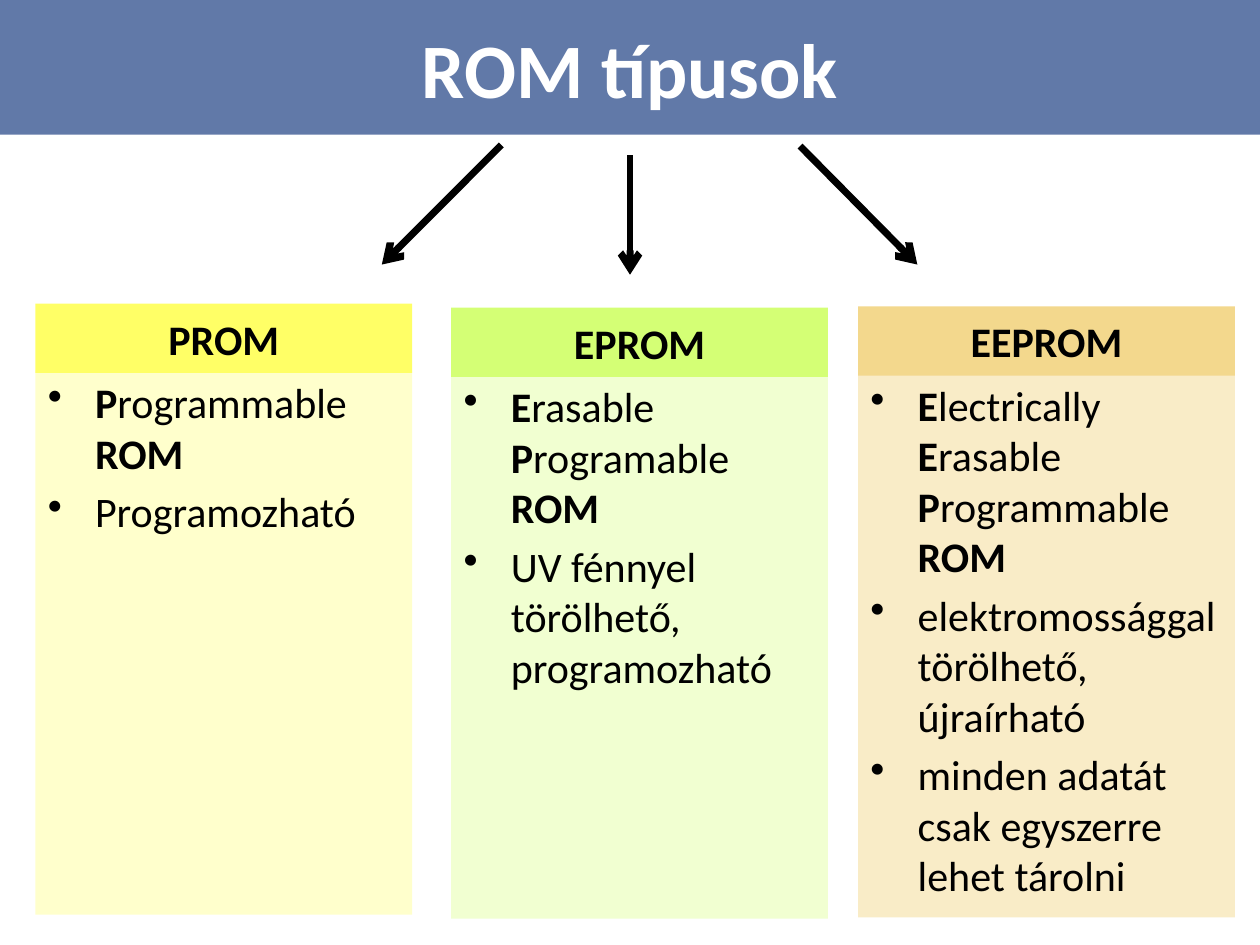
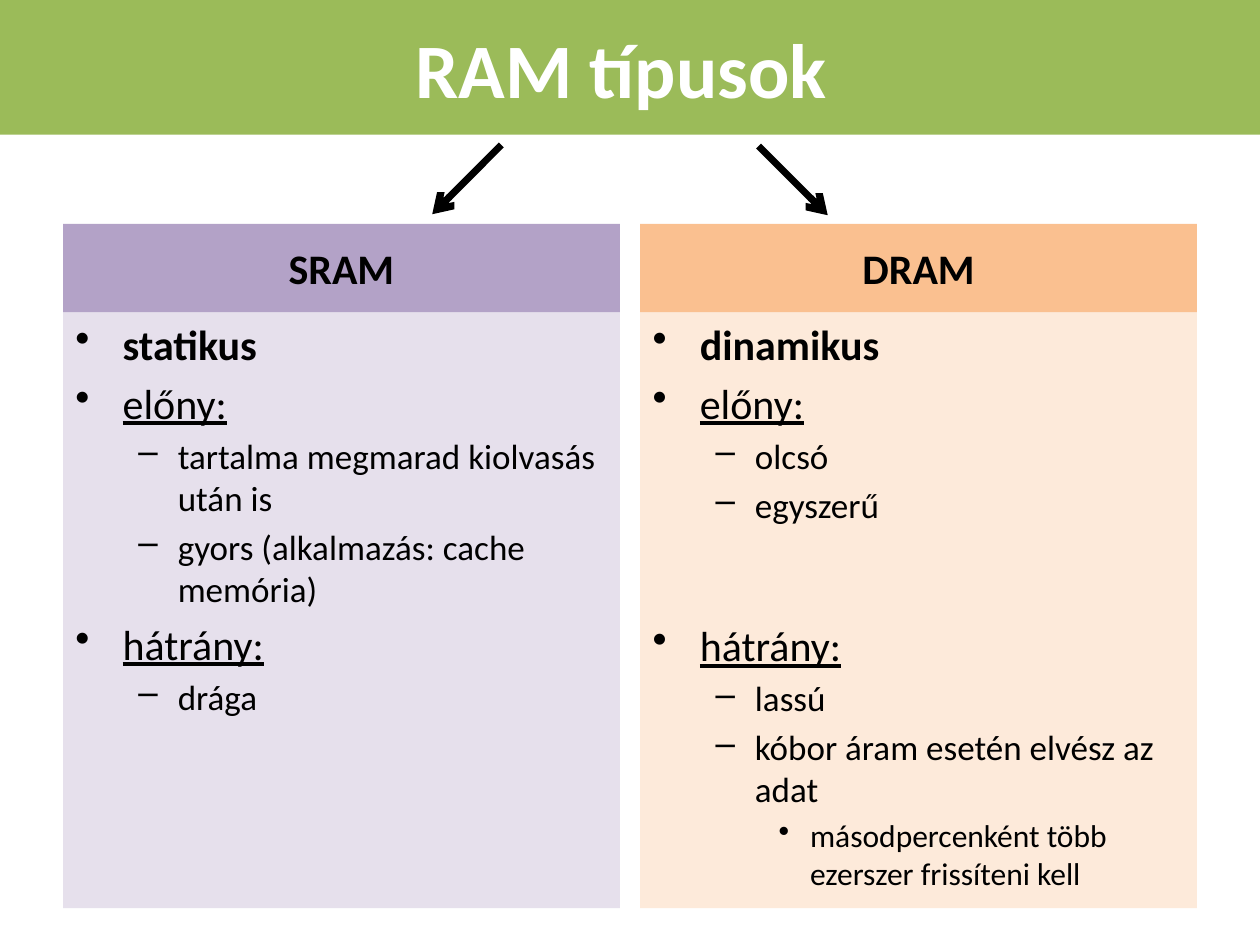
from lxml import etree
from pptx import Presentation
from pptx import util as u
from pptx.dml.color import RGBColor
from pptx.enum import shapes, text
from pptx.oxml import ns

Pt = u.Pt
HUES = {
    "rom": "6179A8", "ram": "9BBB59", "white": "FFFFFF", "black": "000000",
    "prom": "FFFF66", "prom body": "FFFFCC",
    "eprom": "D4FF75", "eprom body": "F1FFD1",
    "eeprom": "F3D88D", "eeprom body": "F9ECC7",
    "sram": "B3A2C7", "sram body": "E6E0EC",
    "dram": "FAC090", "dram body": "FDEADA",
}
# Per level: size, left margin, hanging indent, bullet
LEVELS = [(24, 27, 27, "•"), (20, 58.5, 22.5, "–"), (18, 90, 18, "•")]


def add_xml(parent, tag, **attrs):
    return etree.SubElement(parent, ns.qn(tag), attrs)


class Deck:
    font = "Calibri"
    wide, high = 720, 540

    def __init__(self):
        self.prs = Presentation()
        self.prs.slide_width, self.prs.slide_height = Pt(self.wide), Pt(self.high)
        self.slide = None

    def page(self, title, hue):
        self.slide = self.prs.slides.add_slide(self.prs.slide_layouts[6])
        self.label(title, (0, 0, self.wide, 77), hue, 44, "white")

    def box(self, place, hue):
        rect = self.slide.shapes.add_shape(
            shapes.MSO_SHAPE.RECTANGLE, *[Pt(n) for n in place])
        rect.shadow.inherit = False
        rect.fill.solid()
        rect.fill.fore_color.rgb = RGBColor.from_string(HUES[hue])
        rect.line.fill.background()
        return rect.text_frame

    def style(self, run, size, hue="black", bold=False, under=False):
        font = run.font
        font.name, font.size, font.bold, font.underline = self.font, Pt(size), bold, under
        font.color.rgb = RGBColor.from_string(HUES[hue])

    def label(self, words, place, hue, size=24, ink="black", before=0):
        frame = self.box(place, hue)
        frame.text = words
        frame.vertical_anchor = text.MSO_ANCHOR.MIDDLE
        para = frame.paragraphs[0]
        para.alignment = text.PP_ALIGN.CENTER
        para.space_before = Pt(before)
        self.style(para.runs[0], size, ink, bold=True)

    def items(self, rows, place, hue):
        """Each row: level, words (*bold*, heading ends in a colon), space after."""
        frame = self.box(place, hue)
        frame.vertical_anchor = text.MSO_ANCHOR.TOP
        for n, (level, words, *after) in enumerate(rows):
            para = frame.add_paragraph() if n else frame.paragraphs[0]
            size, left, hang, mark = LEVELS[level]
            para.level = level
            para.alignment = text.PP_ALIGN.LEFT
            para.space_before = Pt(size * 0.2)
            para.space_after = Pt(after[0] if after else 0)
            props = para._p.get_or_add_pPr()
            props.set("marL", str(Pt(left)))
            props.set("indent", str(-Pt(hang)))
            add_xml(props, "a:buChar", char=mark)
            for row, line in enumerate(words.split("\n")):
                if row:
                    para.add_line_break()
                for k, part in enumerate(line.split("*")):
                    if part:
                        run = para.add_run()
                        run.text = part
                        self.style(run, size, bold=k % 2 == 1, under=words.endswith(":"))

    def card(self, name, rows, left, top, width, head, step, depth):
        hue = name.lower()
        self.items(rows, (left, top + step, width, depth), hue + " body")
        self.label(name, (left, top, width, head), hue, before=4.8)

    def arrow(self, *ends):
        line = self.slide.shapes.add_connector(
            shapes.MSO_CONNECTOR.STRAIGHT, *[Pt(n) for n in ends])
        line.line.width = Pt(4)
        line.line.color.rgb = RGBColor.from_string(HUES["black"])
        add_xml(line.line._get_or_add_ln(), "a:tailEnd", type="arrow")
        add_xml(line._element.spPr, "a:effectLst")


def main():
    deck = Deck()

    # ROM: three cards
    deck.page("ROM típusok", "rom")
    roms = [
        ("PROM", 20.2, 173.5, [
            (0, "*P*rogrammable *ROM*"),
            (0, "Programozható")]),
        ("EPROM", 257.8, 175.8, [
            (0, "*E*rasable *P*rogramable *ROM*"),
            (0, "UV fénnyel törölhető, programozható")]),
        ("EEPROM", 490.3, 175, [
            (0, "*E*lectrically *E*rasable *P*rogrammable *ROM*"),
            (0, "elektromossággal törölhető,\nújraírható"),
            (0, "minden adatát csak egyszerre lehet tárolni")]),
    ]
    for name, left, top, rows in roms:
        deck.card(name, rows, left, top, 215.3, head=39.6, step=38.2, depth=311)
    deck.arrow(286.5, 82.8, 218.2, 151.2)
    deck.arrow(360, 88.6, 360, 157)
    deck.arrow(457.2, 83.5, 524.2, 151.2)

    # RAM: two cards
    deck.page("RAM típusok ", "ram")
    rams = [
        ("SRAM", [
            (0, "*statikus*"),
            (0, "előny:"),
            (1, "tartalma megmarad kiolvasás után is"),
            (1, "gyors (alkalmazás: cache memória)"),
            (0, "hátrány:"),
            (1, "drága")]),
        ("DRAM", [
            (0, "*dinamikus*"),
            (0, "előny:"),
            (1, "olcsó"),
            (1, "egyszerű", 48.8),
            (0, "hátrány:"),
            (1, "lassú"),
            (1, "kóbor áram esetén elvész az adat"),
            (2, "másodpercenként több ezerszer frissíteni kell")]),
    ]
    for n, (name, rows) in enumerate(rams):
        deck.card(name, rows, 36 + n * 329.8, 128, 318.2, head=50.4, step=50.4, depth=340.6)
    deck.arrow(286.5, 82.8, 247, 122.4)
    deck.arrow(433.5, 83.5, 473, 123)

    deck.prs.save("out.pptx")


if __name__ == "__main__":
    main()
